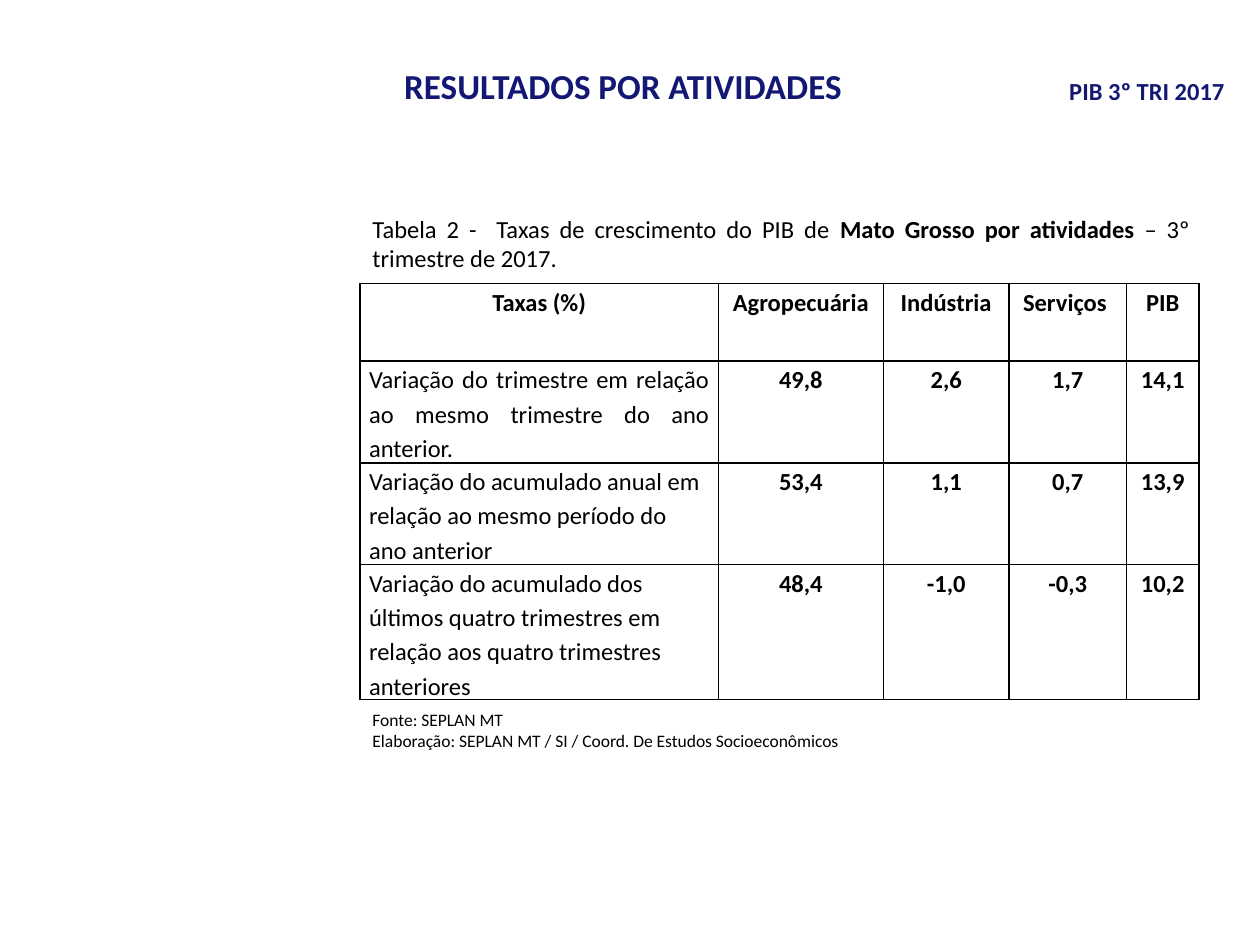
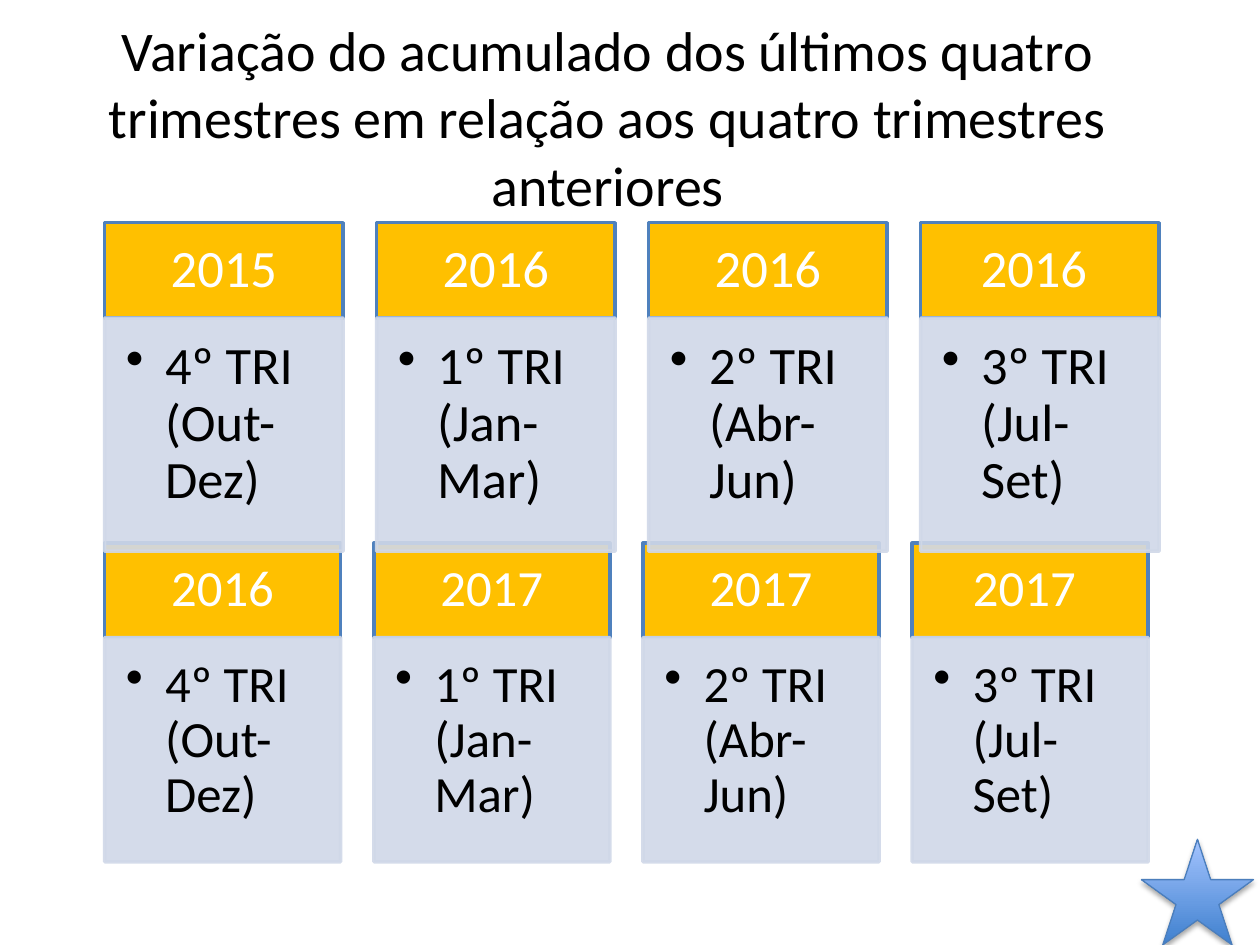
from dataclasses import dataclass

from lxml import etree
from pptx import Presentation
from pptx.dml.color import RGBColor
from pptx.enum.shapes import MSO_SHAPE
from pptx.enum.text import MSO_ANCHOR, PP_ALIGN
from pptx.oxml.ns import qn
from pptx.util import Cm, Pt

RECTANGLE = MSO_SHAPE.RECTANGLE
STAR = MSO_SHAPE.STAR_5_POINT
TOP, MIDDLE = MSO_ANCHOR.TOP, MSO_ANCHOR.MIDDLE
LEFT, CENTER = PP_ALIGN.LEFT, PP_ALIGN.CENTER
RIGHT, JUSTIFY = PP_ALIGN.RIGHT, PP_ALIGN.JUSTIFY


@dataclass(frozen=True)
class Theme:
    font: str = "Calibri"
    navy: str = "121873"
    ink: str = "000000"
    white: str = "FFFFFF"
    amber: str = "FFC000"
    amber_edge: str = "4F81BD"
    mist: str = "D0D8E8"
    star_dark: str = "3F80CE"
    star_light: str = "A4C4FF"
    star_edge: str = "4B7EBC"
    heading: int = 20
    title: int = 32
    body: int = 14
    source: int = 10
    table_spacing: float = 1.15
    card_spacing: float = 0.9


THEME = Theme()
CARD_ASPECT = 0.4
CARD_PITCH = 1.14
HEADER_INSETS = (0.58, 0.33, 0.58, 0.33)
BODY_INSETS = (0.43, 0.43, 0.58, 0.64)
QUARTERS = ("4º TRI (Out-Dez)", "1º TRI (Jan-Mar)", "2º TRI (Abr-Jun)", "3º TRI (Jul-Set)")
COLUMN_WIDTHS = (7.22, 3.33, 2.53, 2.37, 1.46)
ROW_HEIGHTS = (1.57, 2.05, 2.05, 2.72)
GROWTH_RATES = (
    ("Taxas (%)", "Agropecuária", "Indústria", "Serviços ", "PIB"),
    ("Variação do trimestre em relação ao mesmo trimestre do ano anterior.",
     "49,8", "2,6", "1,7", "14,1"),
    ("Variação do acumulado anual em relação ao mesmo período do ano anterior",
     "53,4", "1,1", "0,7", "13,9"),
    ("Variação do acumulado dos últimos quatro trimestres em relação aos quatro "
     "trimestres anteriores", "48,4", "-1,0", "-0,3", "10,2"),
)


def rgb(code):
    return RGBColor.from_string(code)


def add_element(parent, tag, **attributes):
    return etree.SubElement(parent, qn(tag), {k: str(v) for k, v in attributes.items()})


def style(paragraph, size, color=THEME.ink, bold=False, align=LEFT, spacing=None, before=None):
    paragraph.alignment = align
    paragraph.font.name = THEME.font
    paragraph.font.size = Pt(size)
    paragraph.font.color.rgb = rgb(color)
    if bold is not None:
        paragraph.font.bold = bold
    if spacing:
        paragraph.line_spacing = spacing
    if before:
        paragraph.space_before = Pt(before)


def set_insets(frame, insets):
    (frame.margin_left, frame.margin_top,
     frame.margin_right, frame.margin_bottom) = map(Cm, insets)


def add_text(slide, box, lines, size, anchor=TOP, **look):
    frame = slide.shapes.add_textbox(*map(Cm, box)).text_frame
    frame.word_wrap = True
    frame.vertical_anchor = anchor
    frame.text = "\n".join(lines)
    for paragraph in frame.paragraphs:
        style(paragraph, size, **look)
    return frame


def add_caption(slide, box, parts):
    paragraph = add_text(slide, box, [""], THEME.body, align=JUSTIFY, bold=None).paragraphs[0]
    for words, bold in parts:
        run = paragraph.add_run()
        run.text = words
        run.font.bold = bold


def add_borders(cell):
    properties = cell._tc.get_or_add_tcPr()
    for side in ("a:lnL", "a:lnR", "a:lnT", "a:lnB"):
        border = add_element(properties, side, w=Pt(1))
        add_element(add_element(border, "a:solidFill"), "a:srgbClr", val=THEME.ink)


def add_rates_table(slide, left, top):
    table = slide.shapes.add_table(
        len(GROWTH_RATES), len(COLUMN_WIDTHS), Cm(left), Cm(top),
        Cm(sum(COLUMN_WIDTHS)), Cm(sum(ROW_HEIGHTS))).table
    table.first_row = table.horz_banding = False
    for column, width in zip(table.columns, COLUMN_WIDTHS):
        column.width = Cm(width)
    for r, (height, values) in enumerate(zip(ROW_HEIGHTS, GROWTH_RATES)):
        table.rows[r].height = Cm(height)
        for c, value in enumerate(values):
            cell = table.cell(r, c)
            add_borders(cell)
            cell.fill.background()
            set_insets(cell, (0.18, 0, 0.18, 0))
            cell.text = value
            is_label = r > 0 and c == 0
            label_align = JUSTIFY if r == 1 else LEFT
            style(cell.text_frame.paragraphs[0], THEME.body, bold=not is_label,
                  align=label_align if is_label else CENTER,
                  spacing=THEME.table_spacing, before=6)


def set_alpha(shape, percent):
    for color in shape._element.spPr.iter(qn("a:srgbClr")):
        add_element(color, "a:alpha", val=percent * 1000)


def add_panel(slide, box, words, fill, edge, insets, anchor, **look):
    panel = slide.shapes.add_shape(RECTANGLE, *map(Cm, box))
    panel.shadow.inherit = False
    panel.fill.solid()
    panel.fill.fore_color.rgb = rgb(fill)
    panel.line.color.rgb = rgb(edge)
    panel.line.width = Pt(2)
    frame = panel.text_frame
    frame.word_wrap = True
    frame.vertical_anchor = anchor
    set_insets(frame, insets)
    frame.text = words
    style(frame.paragraphs[0], spacing=THEME.card_spacing, **look)
    return panel


def add_bullet(paragraph):
    paragraph.level = 1
    properties = paragraph._p.get_or_add_pPr()
    properties.set("marL", str(Cm(0.79)))
    properties.set("indent", str(-Cm(0.79)))
    bullet = etree.Element(qn("a:buChar"), char="•")
    properties.find(qn("a:defRPr")).addprevious(bullet)


def add_quarter_cards(slide, top, width, body_height, size, years):
    header_height = width * CARD_ASPECT
    for index, (year, quarter) in enumerate(zip(years, QUARTERS)):
        left = 2.11 + index * width * CARD_PITCH
        add_panel(slide, (left, top, width, header_height), year, THEME.amber,
                  THEME.amber_edge, HEADER_INSETS, MIDDLE,
                  size=size, color=THEME.white, align=CENTER)
        body = add_panel(slide, (left, top + header_height, width, body_height), quarter,
                         THEME.mist, THEME.mist, BODY_INSETS, TOP, size=size)
        set_alpha(body, 90)
        add_bullet(body.text_frame.paragraphs[0])


def add_star(slide, box):
    star = slide.shapes.add_shape(STAR, *map(Cm, box))
    star.fill.gradient()
    star.fill.gradient_angle = 90
    for stop, color in zip(star.fill.gradient_stops, (THEME.star_dark, THEME.star_light)):
        stop.color.rgb = rgb(color)
    star.line.color.rgb = rgb(THEME.star_edge)
    star.line.width = Pt(0.75)
    star.shadow.inherit = False
    effects = star._element.spPr.find(qn("a:effectLst"))
    shadow = add_element(effects, "a:outerShdw", blurRad=Pt(3.1), dist=Pt(1.8),
                         dir=90 * 60000, rotWithShape=0)
    add_element(add_element(shadow, "a:srgbClr", val=THEME.ink), "a:alpha", val=35000)


def build_activity_results(slide):
    add_text(slide, (7.9, 1.17, 9.53, 1.12), ["RESULTADOS POR ATIVIDADES"],
             THEME.heading, color=THEME.navy, bold=True)
    add_text(slide, (17.07, 1.4, 7.87, 0.86), ["PIB 3º TRI 2017"],
             THEME.body, color=THEME.navy, bold=True, align=RIGHT)
    add_caption(slide, (7.26, 4.19, 16.97, 1.45), (
        ("Tabela 2 -  Taxas de crescimento do PIB de ", False),
        ("Mato Grosso por atividades ", True),
        ("– 3º trimestre de 2017.", False)))
    source = add_text(slide, (7.26, 14.1, 12.7, 1.17), [
        "Fonte: SEPLAN MT",
        "Elaboração: SEPLAN MT / SI / Coord. De Estudos Socioeconômicos"], THEME.source)
    source.paragraphs[0].line_spacing = THEME.table_spacing
    source.paragraphs[0].space_before = Pt(5)
    add_rates_table(slide, 7.26, 5.71)


def build_quarter_comparison(slide):
    add_text(slide, (0, 0.76, 24.51, 3.18), [
        "Variação do acumulado dos últimos quatro trimestres em relação aos quatro "
        "trimestres anteriores"], THEME.title, anchor=MIDDLE, align=CENTER)
    add_quarter_cards(slide, 10.95, 4.76, 4.52, 29, ("2016", "2017", "2017", "2017 "))
    add_quarter_cards(slide, 4.49, 4.81, 4.7, 30, ("2015", "2016", "2016", "2016 "))
    add_star(slide, (23.01, 16.92, 2.26, 2.13))


def main():
    deck = Presentation()
    deck.slide_width, deck.slide_height = Cm(25.4), Cm(19.05)
    blank = deck.slide_layouts[6]
    for build in (build_activity_results, build_quarter_comparison):
        build(deck.slides.add_slide(blank))
    deck.save("out.pptx")


if __name__ == "__main__":
    main()
